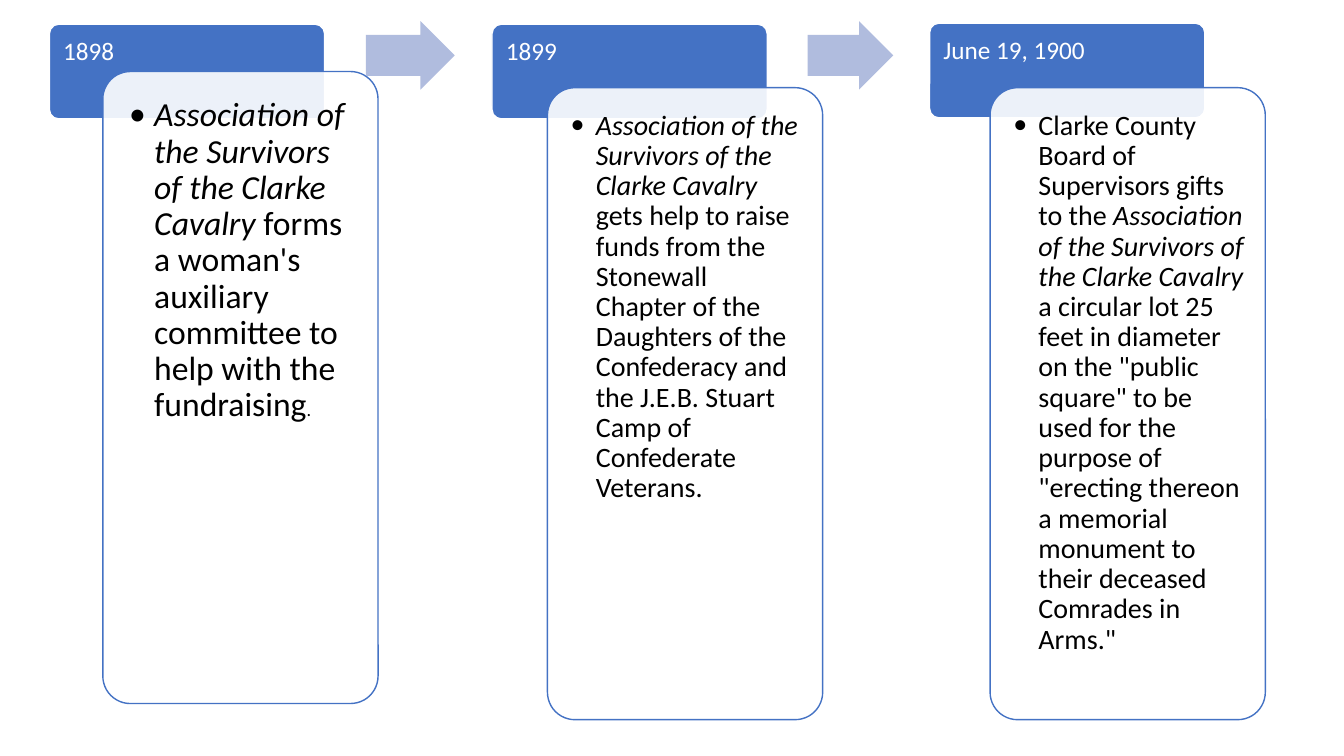
from dataclasses import dataclass

from lxml import etree
from pptx import Presentation
from pptx import util as u
from pptx.dml.color import RGBColor
from pptx.enum import shapes, text
from pptx.oxml import ns


@dataclass(frozen=True)
class Theme:
    font: str = "Calibri"
    blue: str = "4472C4"
    pale_blue: str = "B0BCDE"
    white: str = "FFFFFF"
    black: str = "000000"
    header_size: int = 18
    large_size: int = 24
    body_size: int = 20
    full_stop_size: int = 13
    line_width: int = 1
    card_opacity: int = 90


THEME = Theme()
BOX_WIDTH, HEADER_HEIGHT, CARD_HEIGHT = 2.73, 0.94, 6.27
ARROW_TOP, ARROW_HEIGHT = 0.21, 0.68
ASSOCIATION = "Association of the Survivors of the Clarke Cavalry "

# Header position, card offset from it, card inset, and runs of (text, size, italic)
STAGES = [
    ("1898", (0.49, 0.24), (0.53, 0.47), 0.19, [
        (ASSOCIATION, THEME.large_size, True),
        ("forms a woman's auxiliary committee to help with the fundraising",
         THEME.large_size, False),
        (".", THEME.full_stop_size, False),
    ]),
    ("1899", (4.88, 0.24), (0.55, 0.63), 0.16, [
        (ASSOCIATION, THEME.body_size, True),
        ("gets help to raise funds from the Stonewall Chapter of the Daughters of the "
         "Confederacy and the J.E.B. Stuart Camp of Confederate Veterans.",
         THEME.body_size, False),
    ]),
    ("June 19, 1900", (9.22, 0.23), (0.6, 0.64), 0.16, [
        ("Clarke County Board of Supervisors gifts to the ", THEME.body_size, False),
        (ASSOCIATION, THEME.body_size, True),
        ('a circular lot 25 feet in diameter on the "public square" to be used for the '
         'purpose of "erecting thereon a memorial monument to their deceased Comrades '
         'in Arms."', THEME.body_size, False),
    ]),
]
ARROWS = [(3.63, 0.88), (8.01, 0.85)]  # left, width


def color(value):
    return RGBColor.from_string(value)


def add_block(slide, kind, box, fill, line=None, adjustments=(0.1,)):
    shape = slide.shapes.add_shape(kind, *map(u.Inches, box))
    shape.shadow.inherit = False
    shape.fill.solid()
    shape.fill.fore_color.rgb = color(fill)
    if line:
        shape.line.color.rgb = color(line)
        shape.line.width = u.Pt(THEME.line_width)
    else:
        shape.line.fill.background()
    for index, value in enumerate(adjustments):
        shape.adjustments[index] = value
    return shape


def start_text(shape, insets):
    """Prepare top-left text and return its first paragraph."""
    frame = shape.text_frame
    frame.word_wrap = True
    frame.vertical_anchor = text.MSO_ANCHOR.TOP
    (frame.margin_left, frame.margin_top,
     frame.margin_right, frame.margin_bottom) = map(u.Inches, insets)
    paragraph = frame.paragraphs[0]
    paragraph.alignment = text.PP_ALIGN.LEFT
    paragraph.line_spacing = 0.9
    return paragraph


def add_run(paragraph, words, size, ink, italic=False):
    run = paragraph.add_run()
    run.text = words
    run.font.name = THEME.font
    run.font.size = u.Pt(size)
    run.font.italic = italic
    run.font.color.rgb = color(ink)


def add_bullet(paragraph):
    properties = paragraph._p.get_or_add_pPr()
    properties.set("marL", str(u.Inches(0.25)))
    properties.set("indent", str(u.Inches(-0.25)))
    etree.SubElement(properties, ns.qn("a:buFont")).set("typeface", THEME.font)
    etree.SubElement(properties, ns.qn("a:buChar")).set("char", "•")


def set_opacity(shape, percent):
    fill_color = shape._element.spPr.find(ns.qn("a:solidFill"))[0]
    etree.SubElement(fill_color, ns.qn("a:alpha")).set("val", str(percent * 1000))


def add_header(slide, box, date):
    header = add_block(slide, shapes.MSO_SHAPE.ROUNDED_RECTANGLE, box,
                       THEME.blue, THEME.white)
    paragraph = start_text(header, (0.11, 0.12, 0.11, 0.07))
    add_run(paragraph, date, THEME.header_size, THEME.white)


def add_card(slide, box, inset, runs):
    card = add_block(slide, shapes.MSO_SHAPE.ROUNDED_RECTANGLE, box,
                     THEME.white, THEME.blue)
    set_opacity(card, THEME.card_opacity)
    near, far = inset - 0.01, inset - 0.03
    paragraph = start_text(card, (near, near, far, near))
    add_bullet(paragraph)
    for words, size, italic in runs:
        add_run(paragraph, words, size, THEME.black, italic)


def add_stage(slide, position, date, card_offset, inset, runs):
    """Place a date header with its card overlapping it."""
    left, top = position
    across, down = card_offset
    add_header(slide, (left, top, BOX_WIDTH, HEADER_HEIGHT), date)
    add_card(slide, (left + across, top + down, BOX_WIDTH, CARD_HEIGHT), inset, runs)


def add_arrow(slide, box):
    add_block(slide, shapes.MSO_SHAPE.RIGHT_ARROW, box, THEME.pale_blue,
              adjustments=(0.6, 0.5))


def main():
    presentation = Presentation()
    presentation.slide_width = u.Inches(13.33)
    presentation.slide_height = u.Inches(7.5)
    slide = presentation.slides.add_slide(presentation.slide_layouts[6])
    for index, (date, position, card_offset, inset, runs) in enumerate(STAGES):
        add_stage(slide, position, date, card_offset, inset, runs)
        if index < len(ARROWS):
            left, width = ARROWS[index]
            add_arrow(slide, (left, ARROW_TOP, width, ARROW_HEIGHT))
    presentation.save("out.pptx")


if __name__ == "__main__":
    main()
